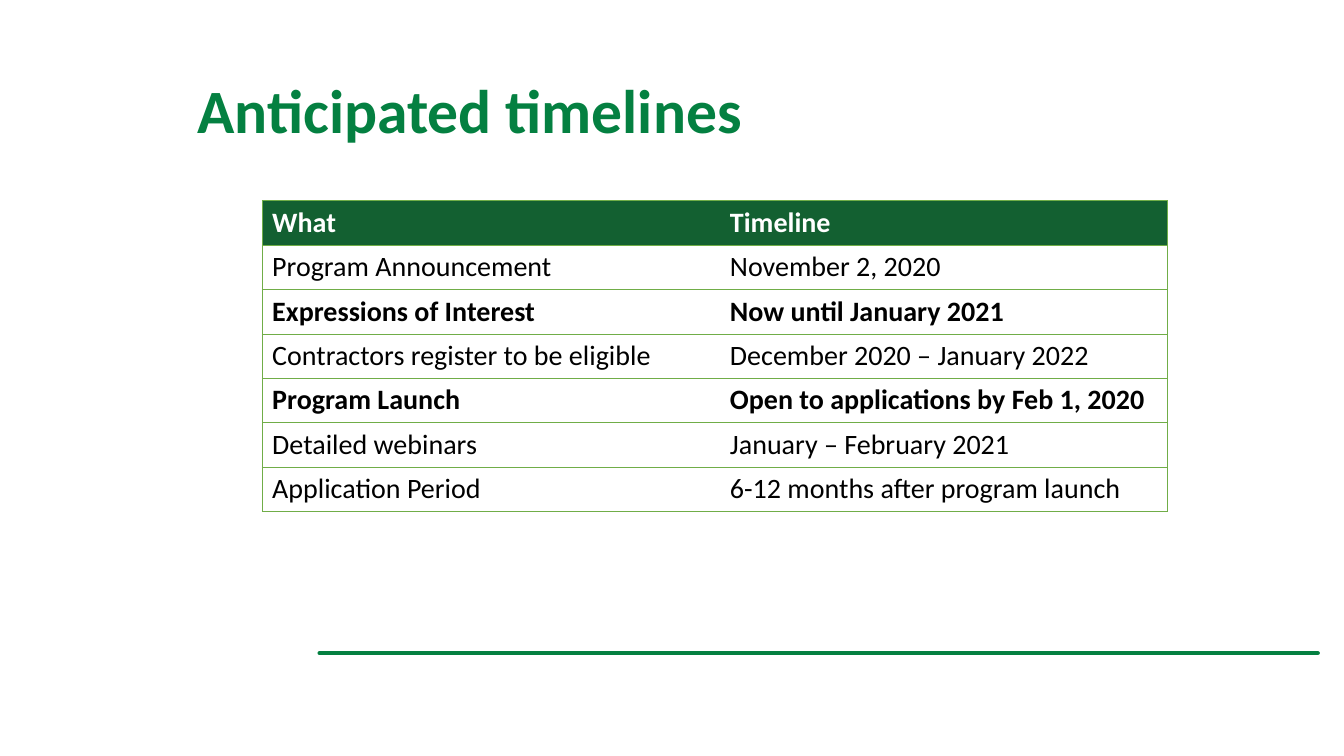
from dataclasses import dataclass

from lxml import etree
from pptx import Presentation
from pptx.dml.color import RGBColor
from pptx.enum.shapes import MSO_CONNECTOR
from pptx.enum.text import MSO_ANCHOR, PP_ALIGN
from pptx.oxml.ns import qn
from pptx.util import Inches, Pt

STRAIGHT = MSO_CONNECTOR.STRAIGHT
MIDDLE = MSO_ANCHOR.MIDDLE
LEFT = PP_ALIGN.LEFT
TITLE_ONLY = 5


@dataclass
class Theme:
    font: str = "Calibri"
    green: str = "048041"
    head: str = "136031"
    grid: str = "70AD47"
    white: str = "FFFFFF"
    black: str = "000000"
    title: int = 44
    cell: int = 20
    rule: float = 3
    edge: float = 0.5


class Deck:
    def __init__(self, theme):
        self.theme = theme
        self.file = Presentation()
        self.file.slide_width = Inches(13.33)
        self.file.slide_height = Inches(7.5)
        self.slide = self.file.slides.add_slide(self.file.slide_layouts[TITLE_ONLY])

    def style(self, para, size, color, bold):
        para.alignment = LEFT
        font = para.font
        font.name, font.size, font.bold = self.theme.font, Pt(size), bold
        font.color.rgb = RGBColor.from_string(color)

    def title(self, text, left, top, width, height):
        box = self.slide.shapes.title
        box.left, box.top = Inches(left), Inches(top)
        box.width, box.height = Inches(width), Inches(height)
        frame = box.text_frame
        frame.text = text
        frame.vertical_anchor = MIDDLE
        para = frame.paragraphs[0]
        para.line_spacing = 0.9
        self.style(para, self.theme.title, self.theme.green, True)

    def rule(self, left, right, y):
        line = self.slide.shapes.add_connector(
            STRAIGHT, Inches(left), Inches(y), Inches(right), Inches(y))
        line.line.color.rgb = RGBColor.from_string(self.theme.green)
        line.line.width = Pt(self.theme.rule)
        line.line._get_or_add_ln().set("cap", "rnd")
        etree.SubElement(line._element.spPr, qn("a:effectLst"))

    def border(self, cell, side, shown):
        props = cell._tc.get_or_add_tcPr()
        line = etree.SubElement(props, qn(f"a:ln{side}"), w=str(Pt(self.theme.edge)))
        if shown:
            fill = etree.SubElement(line, qn("a:solidFill"))
            etree.SubElement(fill, qn("a:srgbClr"), val=self.theme.grid)
        else:
            etree.SubElement(line, qn("a:noFill"))

    def cell(self, cell, text, head, bold, hidden):
        cell.text = text
        color = self.theme.white if head else self.theme.black
        self.style(cell.text_frame.paragraphs[0], self.theme.cell, color, bold)
        # Borders go ahead of the fill in the cell properties
        for side in "LRTB":
            self.border(cell, side, side != hidden)
        if head:
            cell.fill.solid()
            cell.fill.fore_color.rgb = RGBColor.from_string(self.theme.head)
        else:
            cell.fill.background()

    def table(self, rows, strong, left, top, widths, height):
        table = self.slide.shapes.add_table(
            len(rows), len(widths), Inches(left), Inches(top),
            Inches(sum(widths)), Inches(height * len(rows))).table
        table.horz_banding = False
        for col, width in zip(table.columns, widths):
            col.width = Inches(width)
        for r, row in enumerate(rows):
            for c, text in enumerate(row):
                # The edge between the two columns stays open
                self.cell(table.cell(r, c), text, r == 0, r in strong, "RL"[c])


def main():
    deck = Deck(Theme())

    # Footer rule
    deck.rule(3.17, 13.07, 6.48)

    # Heading
    deck.title("Anticipated timelines", 1.86, 0.4, 10.55, 1.45)

    # Timeline table
    rows = [
        ("What", "Timeline"),
        ("Program Announcement", "November 2, 2020"),
        ("Expressions of Interest", "Now until January 2021"),
        ("Contractors register to be eligible", "December 2020 – January 2022"),
        ("Program Launch", "Open to applications by Feb 1, 2020"),
        ("Detailed webinars", "January – February 2021"),
        ("Application Period", "6-12 months after program launch"),
    ]
    deck.table(rows, {0, 2, 4}, 2.6, 1.99, (4.54, 4.44), 0.44)

    deck.file.save("out.pptx")


if __name__ == "__main__":
    main()
